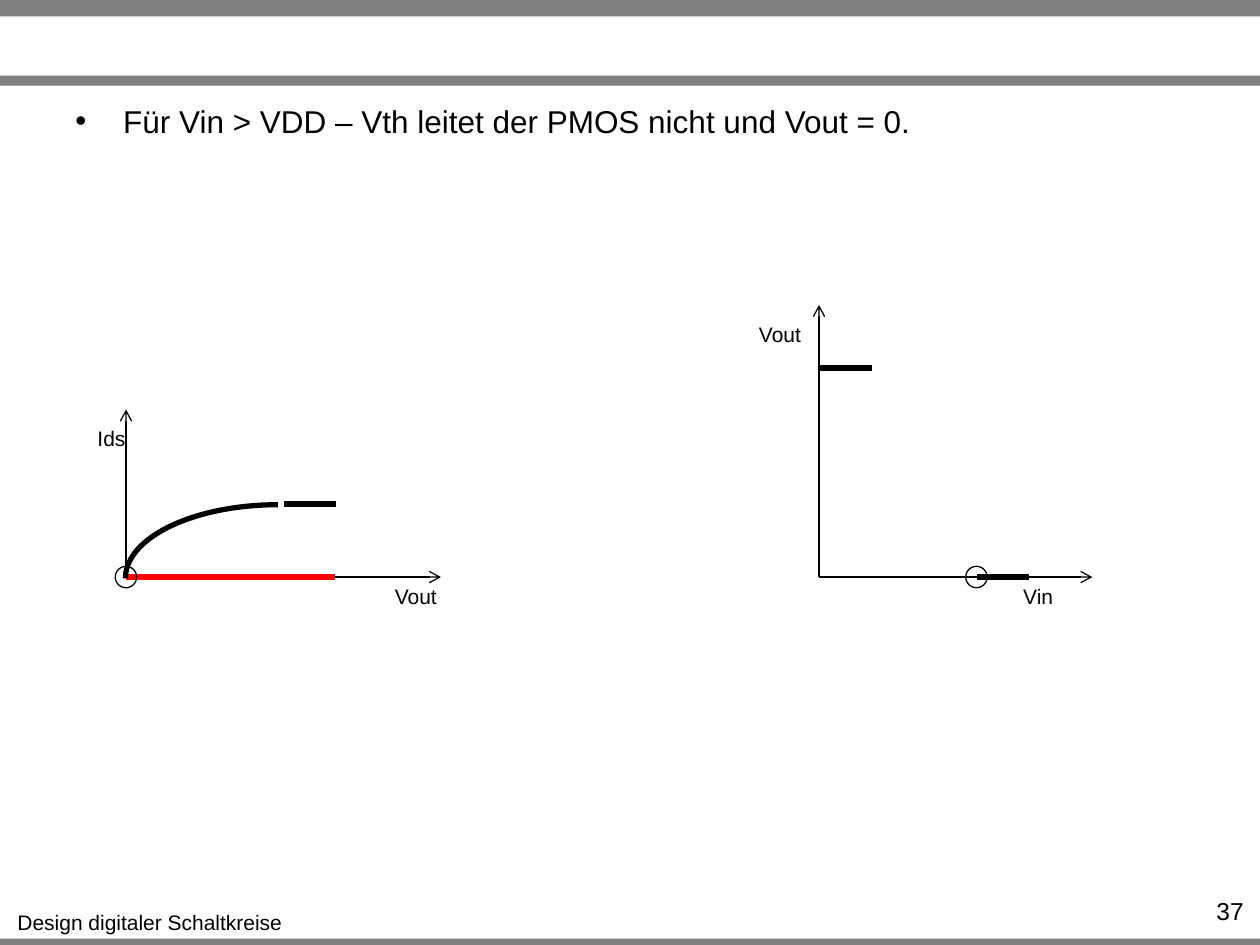
import pptx
import pptx.util
import pptx.dml.color
import pptx.enum.shapes
import pptx.enum.text
import pptx.oxml
import pptx.oxml.ns
from pptx.util import Inches

COLORS = {"bar": "808080", "ink": "000000", "load": "FF0000"}
SHAPE = pptx.enum.shapes.MSO_SHAPE
ALIGN = pptx.enum.text.PP_ALIGN
THIN, THICK = 0.75, 3
AXIS_Y = 4.58
MARK_SIZE = 0.17


def rgb(name):
    return pptx.dml.color.RGBColor.from_string(COLORS[name])


def add_sub(parent, tag, **attrs):
    el = pptx.oxml.ns.qn(tag)
    sub = parent.makeelement(el, attrs)
    parent.append(sub)
    return sub


def add_text(s, text, x, y, w, h, size=12, align=ALIGN.CENTER, wrap=False, bullet=False):
    tb = s.shapes.add_textbox(Inches(x), Inches(y), Inches(w), Inches(h))
    tf = tb.text_frame
    tf.word_wrap = wrap
    p = tf.paragraphs[0]
    p.alignment = align
    r = p.add_run()
    r.text = text
    r.font.name = "Arial"
    r.font.size = pptx.util.Pt(size)
    r.font.color.rgb = rgb("ink")
    if bullet:
        p.space_before = pptx.util.Pt(size * 0.2)
        pPr = p._p.get_or_add_pPr()
        pPr.set("marL", str(Inches(0.38)))
        pPr.set("indent", str(-Inches(0.38)))
        add_sub(pPr, "a:buFont", typeface="Arial")
        add_sub(pPr, "a:buChar", char="•")


def add_bar(s, y, h):
    sp = s.shapes.add_shape(SHAPE.RECTANGLE, 0, Inches(y), Inches(10), Inches(h))
    sp.shadow.inherit = False
    sp.fill.solid()
    sp.fill.fore_color.rgb = rgb("bar")
    sp.line.fill.background()


def add_outline(s, kind, x, y, w, h, width, rotation=0):
    sp = s.shapes.add_shape(kind, Inches(x), Inches(y), Inches(w), Inches(h))
    sp.shadow.inherit = False
    sp.fill.background()
    sp.line.color.rgb = rgb("ink")
    sp.line.width = pptx.util.Pt(width)
    sp.rotation = rotation


def add_line(s, start, end, width=THICK, color="ink", arrow=False):
    cx = s.shapes.add_connector(pptx.enum.shapes.MSO_CONNECTOR.STRAIGHT,
                                *[Inches(v) for v in (*start, *end)])
    cx.line.color.rgb = rgb(color)
    cx.line.width = pptx.util.Pt(width)
    if arrow:
        add_sub(cx.line._get_or_add_ln(), "a:tailEnd", type="arrow")
    add_sub(cx._element.spPr, "a:effectLst")


def add_axes(s, x, right, top):
    for end in ((right, AXIS_Y), (x, top)):
        add_line(s, (x, AXIS_Y), end, THIN, arrow=True)


def add_mark(s, x):
    """Circle an operating point on the horizontal axis."""
    add_outline(s, SHAPE.OVAL, x - MARK_SIZE / 2, AXIS_Y - MARK_SIZE / 2,
                MARK_SIZE, MARK_SIZE, THIN)


def add_current_plot(s):
    add_axes(s, 1, 3.5, 3.25)
    add_text(s, "Ids", 0.67, 3.33, 0.43, 0.3)
    add_text(s, "Vout", 3.03, AXIS_Y, 0.54, 0.3)
    add_line(s, (1, AXIS_Y), (2.66, AXIS_Y), color="load")
    add_outline(s, SHAPE.ARC, 1.62, 3.38, 1.17, 2.42, THICK, rotation=270)
    add_line(s, (2.67, 4), (2.25, 4))
    add_mark(s, 1)


def add_transfer_plot(s):
    add_axes(s, 6.5, 8.67, 2.42)
    add_text(s, "Vout", 5.92, 2.5, 0.54, 0.3)
    add_text(s, "Vin", 8.02, AXIS_Y, 0.44, 0.3)
    for x, y in ((6.5, 2.92), (7.75, AXIS_Y)):
        add_line(s, (x, y), (x + 0.42, y))
    add_mark(s, 7.75)


def main():
    prs = pptx.Presentation()
    prs.slide_width, prs.slide_height = Inches(10), Inches(7.5)
    s = prs.slides.add_slide(prs.slide_layouts[6])
    for y, h in ((7.45, 0.08), (0, 0.13), (0.6, 0.08)):
        add_bar(s, y, h)
    add_text(s, "Design digitaler Schaltkreise", 0.03, 7.17, 2.32, 0.3)
    add_text(s, "Für Vin > VDD – Vth leitet der PMOS nicht und Vout = 0.",
             0.5, 0.76, 9, 0.66, size=18, align=ALIGN.LEFT, wrap=True, bullet=True)
    add_text(s, "37", 9.1, 7.06, 0.87, 0.24, size=14, align=ALIGN.RIGHT, wrap=True)
    add_current_plot(s)
    add_transfer_plot(s)
    prs.save("out.pptx")


if __name__ == "__main__":
    main()
